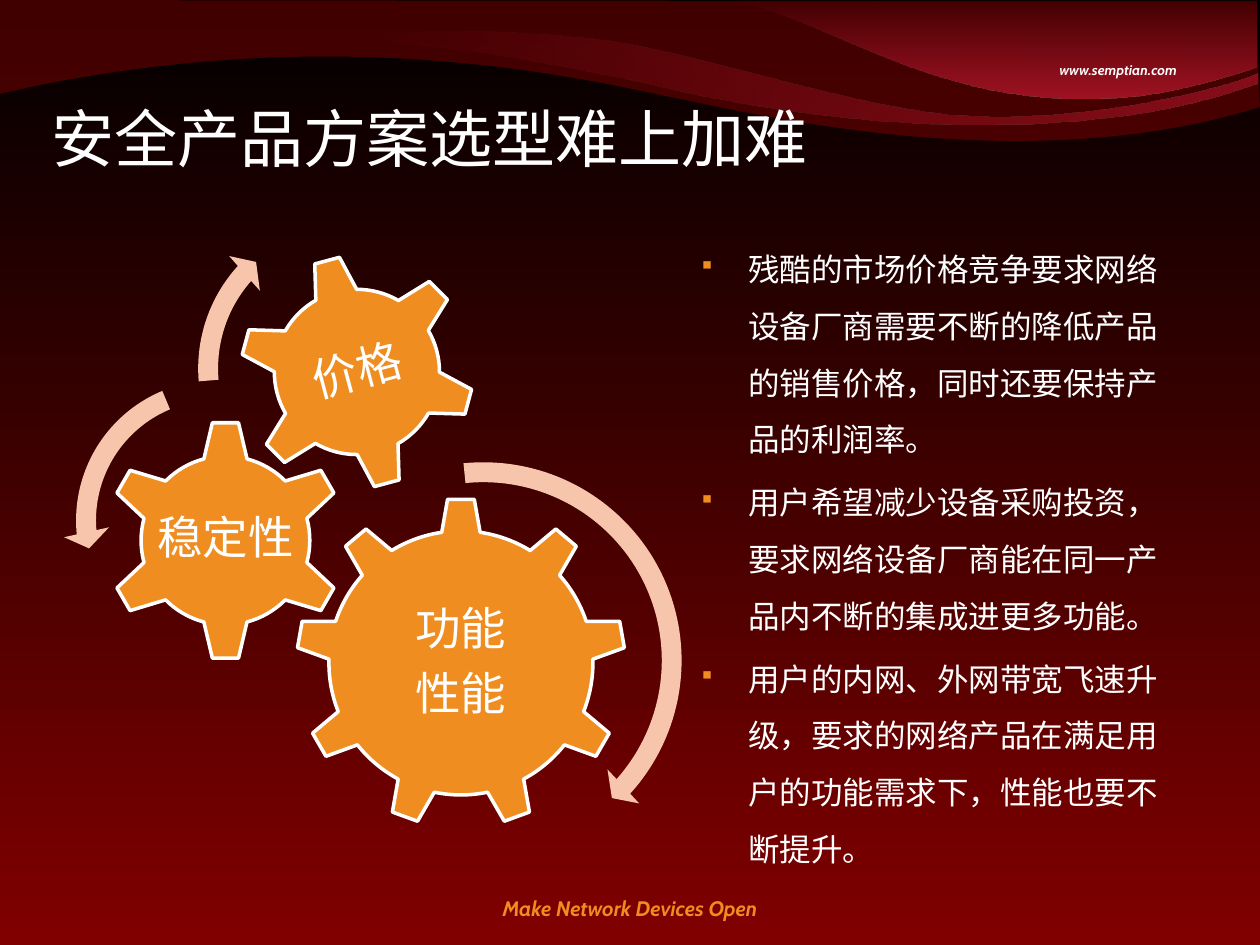
from dataclasses import dataclass
from typing import Optional

from lxml.etree import SubElement
from pptx import Presentation
from pptx.dml.color import RGBColor
from pptx.enum.shapes import MSO_SHAPE
from pptx.enum.text import MSO_ANCHOR, PP_ALIGN
from pptx.oxml.ns import qn
from pptx.util import Pt

EMU_PER_PX = 914400 / 126
CJK_FONT = "Noto Sans CJK SC"
COLORS = {
    "black": "000000",
    "maroon": "800000",
    "crimson": "CA1C35",
    "orange": "EF8D21",
    "peach": "F6C5AC",
    "white": "FFFFFF",
}


@dataclass
class Wave:
    """Closed outline: a start point, then three points for each Bézier curve."""
    start: tuple[int, int]
    points: list[tuple[int, int]]
    color: str
    opacity: tuple[int, ...]
    angle: int = 0


@dataclass
class Figure:
    kind: MSO_SHAPE
    box: tuple[int, int, int, int]
    color: str
    outline: Optional[str] = None
    rotation: int = 0
    adjustments: tuple[float, ...] = ()


@dataclass
class Label:
    box: tuple[int, int, int, int]
    lines: list[str]
    font: dict
    color: str = "white"
    paragraph: Optional[dict] = None
    frame: Optional[dict] = None
    rotation: int = 0
    bullet: Optional[str] = None


def px(value: float) -> int:
    return round(value * EMU_PER_PX)


def rgb(name: str) -> RGBColor:
    return RGBColor.from_string(COLORS[name])


def set_all(target, values: Optional[dict]) -> None:
    for name, value in (values or {}).items():
        setattr(target, name, value)


def set_gradient(fill, names: list[str], angle: int) -> None:
    fill.gradient()
    fill.gradient_angle = angle
    for stop, name in zip(fill.gradient_stops, names):
        stop.color.rgb = rgb(name)


def bend_lines(sp) -> None:
    """Turn every three straight segments into one cubic Bézier curve."""
    lines = list(sp._element.iter(qn("a:lnTo")))
    for first, second, third in zip(lines[::3], lines[1::3], lines[2::3]):
        first.tag = qn("a:cubicBezTo")
        for line in (second, third):
            first.append(line[0])
            line.getparent().remove(line)


def draw_wave(slide, wave: Wave) -> None:
    builder = slide.shapes.build_freeform(*wave.start, scale=EMU_PER_PX)
    builder.add_line_segments(wave.points, close=True)
    sp = builder.convert_to_shape()
    bend_lines(sp)
    sp.shadow.inherit = False
    sp.line.fill.background()
    if len(wave.opacity) == 1:
        sp.fill.solid()
        sp.fill.fore_color.rgb = rgb(wave.color)
    else:
        set_gradient(sp.fill, [wave.color] * 2, wave.angle)
    for clr, percent in zip(sp._element.spPr.iter(qn("a:srgbClr")), wave.opacity):
        SubElement(clr, qn("a:alpha"), val=str(percent * 1000))


def draw_figure(slide, figure: Figure) -> None:
    sp = slide.shapes.add_shape(figure.kind, *map(px, figure.box))
    sp.shadow.inherit = False
    sp.rotation = figure.rotation
    for i, value in enumerate(figure.adjustments):
        sp.adjustments[i] = value
    sp.fill.solid()
    sp.fill.fore_color.rgb = rgb(figure.color)
    if figure.outline:
        sp.line.color.rgb = rgb(figure.outline)
        sp.line.width = Pt(2)
    else:
        sp.line.fill.background()


def add_bullet(p, color: str) -> None:
    """Add a small square; "§" is that square in Wingdings."""
    pPr = p._p.get_or_add_pPr()
    pPr.set("marL", str(px(47)))
    pPr.set("indent", str(-px(47)))
    SubElement(SubElement(pPr, qn("a:buClr")), qn("a:srgbClr"), val=COLORS[color])
    SubElement(pPr, qn("a:buSzPct"), val="80000")
    SubElement(pPr, qn("a:buFont"), typeface="Wingdings", charset="2")
    SubElement(pPr, qn("a:buChar"), char="§")


def draw_label(slide, label: Label) -> None:
    sp = slide.shapes.add_textbox(*map(px, label.box))
    sp.rotation = label.rotation
    tf = sp.text_frame
    tf.word_wrap = True
    set_all(tf, label.frame)
    for i, text in enumerate(label.lines):
        p = tf.add_paragraph() if i else tf.paragraphs[0]
        if label.bullet:
            add_bullet(p, label.bullet)
        set_all(p, label.paragraph)
        if i == 0:
            p.space_before = Pt(0)
        r = p.add_run()
        r.text = text
        set_all(r.font, label.font)
        r.font.color.rgb = rgb(label.color)
        SubElement(r._r.get_or_add_rPr(), qn("a:ea"), typeface=CJK_FONT)


SLOGAN = {"name": "Cabin", "bold": True, "italic": True}
GEAR_TEXT = {
    "font": {"name": "Karla", "size": Pt(26)},
    "paragraph": {"alignment": PP_ALIGN.CENTER, "line_spacing": Pt(28), "space_after": Pt(9)},
    "frame": {"vertical_anchor": MSO_ANCHOR.MIDDLE}
    | {f"margin_{side}": px(5) for side in ("left", "right", "top", "bottom")},
}
GEAR = {"color": "orange", "outline": "white"}

WAVES = [
    Wave((-1, 94), [(339, 15), (600, 83), (680, 99), (761, 115), (1027, 180), (1260, 107),
                    (1260, 107), (1257, 43), (1257, 1), (626, 1), (-1, 0), (-1, 0),
                    (-1, 34), (-1, 62), (-1, 94)],
         "maroon", (50,)),
    Wave((491, 54), [(590, 71), (640, 81), (682, 91), (722, 99), (1028, 166), (1257, 83),
                     (1257, 83), (1257, 86), (1257, 73), (1211, 92), (1077, 121), (968, 115),
                     (858, 110), (703, 53), (600, 40), (495, 28), (402, 31), (344, 39),
                     (345, 40), (402, 42), (491, 54)],
         "crimson", (0, 50)),
    Wave((1257, -1), [(1257, 33), (1257, 67), (1257, 67), (993, 160), (854, 23), (727, -1),
                      (727, -1), (993, -1), (1257, -1)],
         "crimson", (0, 70), 270),
]
FIGURES = [
    Figure(MSO_SHAPE.GEAR_9, (296, 498, 330, 330), **GEAR),
    Figure(MSO_SHAPE.GEAR_6, (105, 420, 241, 241), **GEAR),
    Figure(MSO_SHAPE.GEAR_6, (239, 254, 236, 236), rotation=345, **GEAR),
    Figure(MSO_SHAPE.CIRCULAR_ARROW, (272, 449, 423, 423), "peach",
           adjustments=(0.047, 2.99, 25.2, 158.53, 0.055)),
    Figure(MSO_SHAPE.LEFT_CIRCULAR_ARROW, (63, 367, 307, 307), "peach",
           adjustments=(0.065, 4.3, 104.89, 148.38, 0.075)),
    Figure(MSO_SHAPE.CIRCULAR_ARROW, (185, 203, 331, 331), "peach",
           adjustments=(0.06, 3.94, 133.14, 105.08, 0.07)),
]
LABELS = [
    Label((0, 889, 1260, 38), ["Make Network Devices Open"], SLOGAN | {"size": Pt(12)},
          "orange", {"alignment": PP_ALIGN.CENTER}),
    Label((1047, 55, 144, 29), ["www.semptian.com"], SLOGAN | {"size": Pt(8)},
          frame={"word_wrap": False}),
    Label((39, 69, 1182, 136), ["安全产品方案选型难上加难"], {"name": "Karla", "size": Pt(36)},
          frame={"vertical_anchor": MSO_ANCHOR.MIDDLE}),
    Label((296, 498, 330, 330), ["功能", "性能"], **GEAR_TEXT),
    Label((105, 419, 241, 241), ["稳定性"], **GEAR_TEXT),
    Label((292, 306, 132, 132), ["价格"], rotation=345, **GEAR_TEXT),
    Label((689, 225, 501, 651),
          ["残酷的市场价格竞争要求网络设备厂商需要不断的降低产品的销售价格，同时还要保持产品的利润率。",
           "用户希望减少设备采购投资，要求网络设备厂商能在同一产品内不断的集成进更多功能。",
           "用户的内网、外网带宽飞速升级，要求的网络产品在满足用户的功能需求下，性能也要不断提升。"],
          {"name": CJK_FONT, "size": Pt(18)},
          paragraph={"line_spacing": Pt(32.4), "space_before": Pt(3.6)}, bullet="orange"),
]


def main() -> None:
    prs = Presentation()
    prs.slide_width, prs.slide_height = px(1260), px(945)
    s = prs.slides.add_slide(prs.slide_layouts[6])
    set_gradient(s.background.fill, ["black", "maroon"], 270)
    for draw, items in ((draw_wave, WAVES), (draw_figure, FIGURES), (draw_label, LABELS)):
        for item in items:
            draw(s, item)
    prs.save("out.pptx")


if __name__ == "__main__":
    main()
